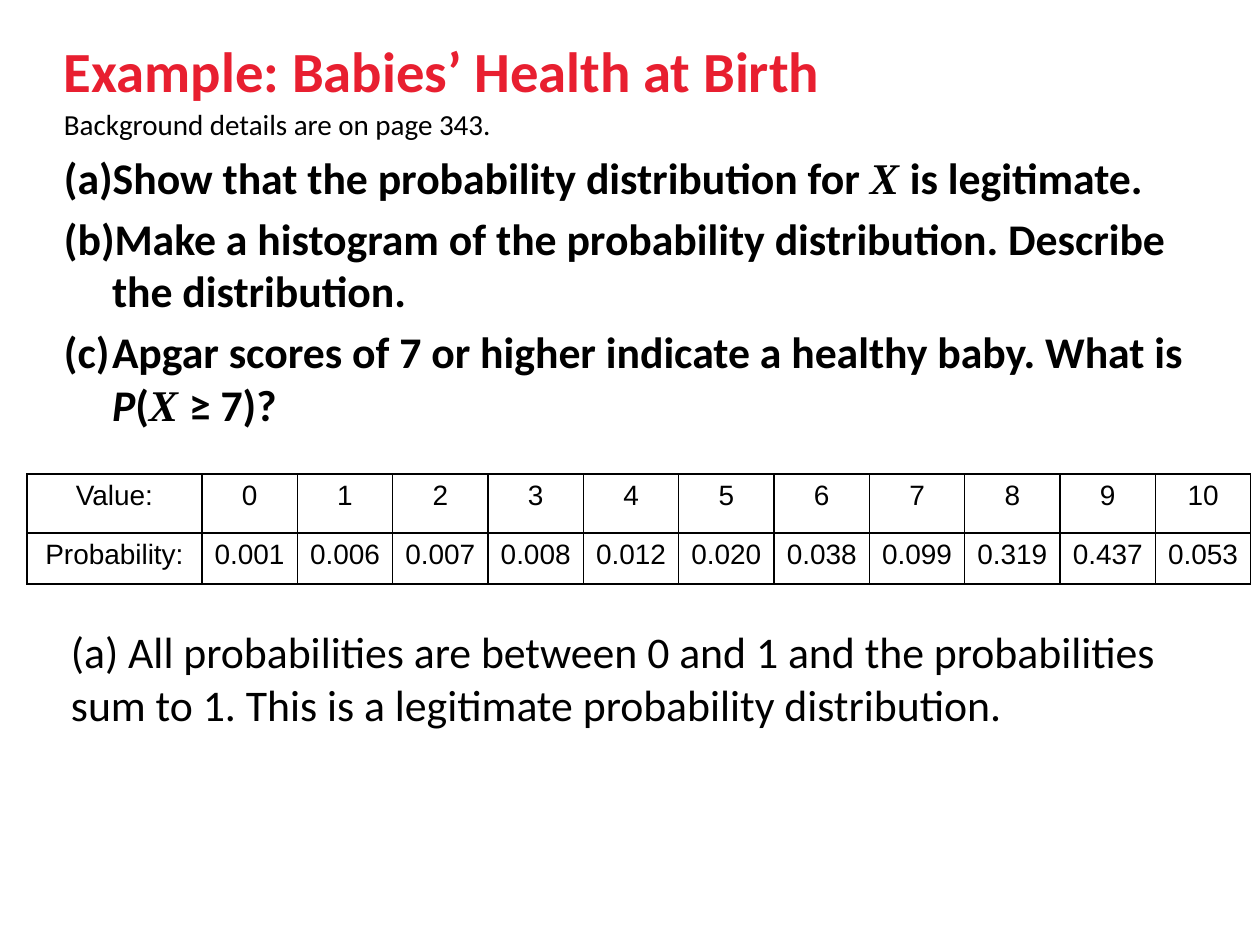
"""Build the Babies' Health at Birth probability slide."""
from dataclasses import dataclass

import pptx
import pptx.dml.color
import pptx.enum.text
import pptx.oxml
import pptx.oxml.ns
import pptx.util

COLORS = {"title": "E81F30", "ink": "000000"}
VALUES = ["Value:", *map(str, range(11))]
PROBABILITIES = ["Probability:", "0.001", "0.006", "0.007", "0.008", "0.012", "0.020",
                 "0.038", "0.099", "0.319", "0.437", "0.053"]
LABEL_WIDTH = 175
ROW_HEIGHTS = [59, 51]


@dataclass
class Span:
    text: str
    font: str = "Calibri"
    italic: bool = False


@dataclass
class Area:
    left: int
    top: int
    width: int
    height: int


X = Span("X ", "Times New Roman", True)
QUESTIONS = [
    [Span("Show that the probability distribution for "), X, Span("is legitimate.")],
    [Span("Make a histogram of the probability distribution. Describe the distribution.")],
    [Span("Apgar scores of 7 or higher indicate a healthy baby. What is "),
     Span("P", italic=True), Span("("), X, Span("≥ 7)?")],
]


def px(length: int) -> int:
    return round(length * 914400 / 126)


def add_text(para, text: str, *, size: float, font: str = "Calibri", color: str = "ink",
             bold: bool = False, italic: bool = False) -> None:
    span = para.add_run()
    span.text = text
    span.font.size = pptx.util.Pt(size)
    span.font.name = font
    span.font.bold = bold
    span.font.italic = italic
    span.font.color.rgb = pptx.dml.color.RGBColor.from_string(COLORS[color])


def add_box(page, area: Area, *, side: int, top: int):
    box = page.shapes.add_textbox(px(area.left), px(area.top), px(area.width), px(area.height))
    frame = box.text_frame
    frame.word_wrap = True
    frame.margin_left = frame.margin_right = px(side)
    frame.margin_top = px(top)
    return frame


def number_paragraph(para) -> None:
    properties = para._p.get_or_add_pPr()
    properties.set("marL", str(px(48)))
    properties.set("indent", str(-px(48)))
    namespace = pptx.oxml.ns.nsdecls("a")
    properties.append(pptx.oxml.parse_xml(
        f'<a:buClr {namespace}><a:srgbClr val="{COLORS["ink"]}"/></a:buClr>'))
    properties.append(pptx.oxml.parse_xml(
        f'<a:buFont {namespace} typeface="+mj-lt"/>'))
    properties.append(pptx.oxml.parse_xml(
        f'<a:buAutoNum {namespace} type="alphaLcParenBoth"/>'))


def add_questions(page) -> None:
    frame = add_box(page, Area(58, 21, 1166, 432), side=6, top=15)
    add_text(frame.paragraphs[0], "Example: Babies’ Health at Birth",
             size=32.4, color="title", bold=True)
    para = frame.add_paragraph()
    para.space_before = pptx.util.Pt(1.5)
    add_text(para, "Background details are on page 343.", size=16.6)
    for question in QUESTIONS:
        para = frame.add_paragraph()
        para.space_before = pptx.util.Pt(5)
        number_paragraph(para)
        for span in question:
            add_text(para, span.text, size=25, font=span.font, bold=True, italic=span.italic)


def add_borders(cell) -> None:
    properties = cell._tc.get_or_add_tcPr()
    for index, side in enumerate(("lnL", "lnR", "lnT", "lnB")):
        properties.insert(index, pptx.oxml.parse_xml(
            f'<a:{side} {pptx.oxml.ns.nsdecls("a")} w="12700"><a:solidFill>'
            f'<a:srgbClr val="{COLORS["ink"]}"/></a:solidFill></a:{side}>'))


def add_distribution(page, area: Area) -> None:
    table = page.shapes.add_table(2, len(VALUES), px(area.left), px(area.top),
                                  px(area.width), px(area.height)).table
    table.first_row = table.horz_banding = False
    value_width = px(area.width - LABEL_WIDTH) // (len(VALUES) - 1)
    for index, column in enumerate(table.columns):
        column.width = value_width if index else px(LABEL_WIDTH)
    for row, height, texts in zip(table.rows, ROW_HEIGHTS, (VALUES, PROBABILITIES)):
        row.height = px(height)
        for cell, text in zip(row.cells, texts):
            cell.fill.background()
            cell.margin_left = cell.margin_right = px(12)
            para = cell.text_frame.paragraphs[0]
            para.alignment = pptx.enum.text.PP_ALIGN.CENTER
            add_text(para, text, size=16, font="Arial")
            add_borders(cell)


def add_answer(page) -> None:
    frame = add_box(page, Area(58, 619, 1133, 118), side=13, top=6)
    frame.auto_size = pptx.enum.text.MSO_AUTO_SIZE.SHAPE_TO_FIT_TEXT
    add_text(frame.paragraphs[0],
             "(a) All probabilities are between 0 and 1 and the probabilities sum to 1. "
             "This is a legitimate probability distribution.", size=25)


def main() -> None:
    deck = pptx.Presentation()
    deck.slide_width, deck.slide_height = px(1260), px(945)
    page = deck.slides.add_slide(deck.slide_layouts[6])
    add_questions(page)
    add_answer(page)
    add_distribution(page, Area(27, 474, 1224, sum(ROW_HEIGHTS)))
    deck.save("out.pptx")


if __name__ == "__main__":
    main()
